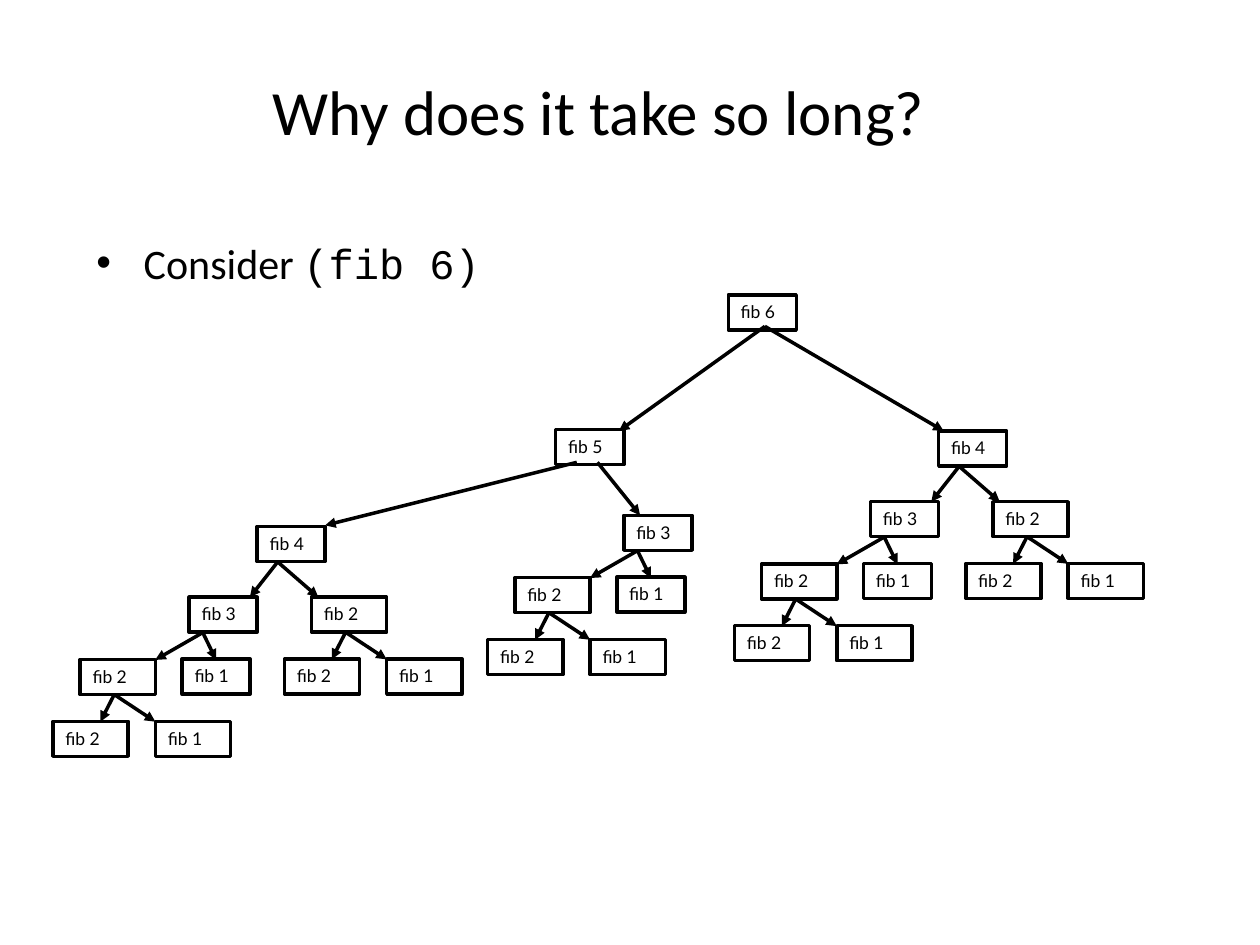
from dataclasses import dataclass

from pptx import Presentation
from pptx.dml.color import RGBColor
from pptx.enum.shapes import MSO_CONNECTOR as Connector, MSO_SHAPE as Shape
from pptx.enum.text import MSO_ANCHOR as Anchor, PP_ALIGN as Align
from pptx.oxml.ns import qn
from pptx.util import Pt
from lxml.etree import SubElement

BLACK = RGBColor(0, 0, 0)
LINE_WIDTH = Pt(2)
BOX_HEIGHT = 20
TITLE_FONT = {"name": "Calibri", "size": Pt(36)}
BODY_FONT = {"name": "Calibri", "size": Pt(24)}
CODE_FONT = {"name": "Courier New", "size": Pt(24)}
NODE_FONT = {"name": "Lato", "size": Pt(10)}


@dataclass
class Node:
    label: str
    width: float
    branches: tuple = ()


@dataclass
class Branch:
    child: Node
    offset: tuple
    start: tuple
    end: tuple


NARROW, WIDE = 38.9, 43
FIB_2 = Node("fib 2", WIDE, (
    Branch(Node("fib 2", WIDE), (-15.5, 35.3), (19.5, 20), (11.6, 35.5)),
    Branch(Node("fib 1", WIDE), (43, 35.3), (19.5, 20), (43, 35.5)),
))
FIB_3 = Node("fib 3", NARROW, (
    Branch(FIB_2, (-62.3, 35.6), (7.8, 20.2), (-19.4, 35.8)),
    Branch(Node("fib 1", NARROW), (-4, 35.3), (7.8, 20.2), (15.4, 35.8)),
))
FIB_4 = Node("fib 4", NARROW, (
    Branch(FIB_3, (-38.9, 40.4), (11.7, 20.2), (-4.2, 40.4)),
    Branch(FIB_2, (31, 40.4), (11.7, 20.2), (34.9, 40.4)),
))
FIB_5 = Node("fib 5", NARROW, (
    Branch(FIB_4, (-170.6, 55.4), (12, 18.7), (-131.8, 54.7)),
    Branch(FIB_3, (38.9, 49), (23.8, 18.7), (48.2, 49)),
))
FIB_6 = Node("fib 6", NARROW, (
    Branch(FIB_5, (-98.6, 77), (20.9, 18), (-62.6, 77.8)),
    Branch(FIB_4, (120.2, 77.8), (20.9, 18), (123.1, 77.8)),
))


def set_values(target, values):
    for name, value in values.items():
        setattr(target, name, value)


def add_run(paragraph, text, font):
    run = paragraph.add_run()
    run.text = text
    set_values(run.font, font)
    run.font.color.rgb = BLACK


def add_title(slide, left, top, width, height):
    shape = slide.shapes.add_textbox(Pt(left), Pt(top), Pt(width), Pt(height))
    set_values(shape.text_frame, {"word_wrap": True, "vertical_anchor": Anchor.MIDDLE})
    paragraph = shape.text_frame.paragraphs[0]
    paragraph.alignment = Align.CENTER
    add_run(paragraph, "Why does it take so long?", TITLE_FONT)


def add_body(slide, left, top, width, height):
    shape = slide.shapes.add_textbox(Pt(left), Pt(top), Pt(width), Pt(height))
    shape.text_frame.word_wrap = True
    paragraph = shape.text_frame.paragraphs[0]
    properties = paragraph._p.get_or_add_pPr()
    properties.set("marL", str(Pt(27)))
    properties.set("indent", str(Pt(-27)))
    SubElement(properties, qn("a:buFont")).set("typeface", "Arial")
    SubElement(properties, qn("a:buChar")).set("char", "•")
    add_run(paragraph, "Consider ", BODY_FONT)
    add_run(paragraph, "(fib 6)", CODE_FONT)


def add_box(slide, node, left, top):
    shape = slide.shapes.add_shape(
        Shape.RECTANGLE, Pt(left), Pt(top), Pt(node.width), Pt(BOX_HEIGHT))
    shape.shadow.inherit = False
    shape.fill.background()
    shape.line.color.rgb = BLACK
    shape.line.width = LINE_WIDTH
    set_values(shape.text_frame, {"word_wrap": True, "vertical_anchor": Anchor.TOP})
    paragraph = shape.text_frame.paragraphs[0]
    paragraph.alignment = Align.LEFT
    add_run(paragraph, node.label, NODE_FONT)


def add_arrow(slide, left, top, start, end):
    connector = slide.shapes.add_connector(
        Connector.STRAIGHT, Pt(left + start[0]), Pt(top + start[1]),
        Pt(left + end[0]), Pt(top + end[1]))
    connector.line.color.rgb = BLACK
    connector.line.width = LINE_WIDTH
    SubElement(connector.line._get_or_add_ln(), qn("a:tailEnd")).set("type", "triangle")
    SubElement(connector._element.spPr, qn("a:effectLst"))


def add_tree(slide, node, left, top):
    add_box(slide, node, left, top)
    for branch in node.branches:
        add_tree(slide, branch.child, left + branch.offset[0], top + branch.offset[1])
        add_arrow(slide, left, top, branch.start, branch.end)


def main():
    presentation = Presentation()
    set_values(presentation, {"slide_width": Pt(720), "slide_height": Pt(540)})
    slide = presentation.slides.add_slide(presentation.slide_layouts[6])
    add_title(slide, 96, 24, 492, 78)
    add_body(slide, 48, 132, 264, 46)
    add_tree(slide, FIB_6, 416.2, 168.5)
    presentation.save("out.pptx")


if __name__ == "__main__":
    main()
